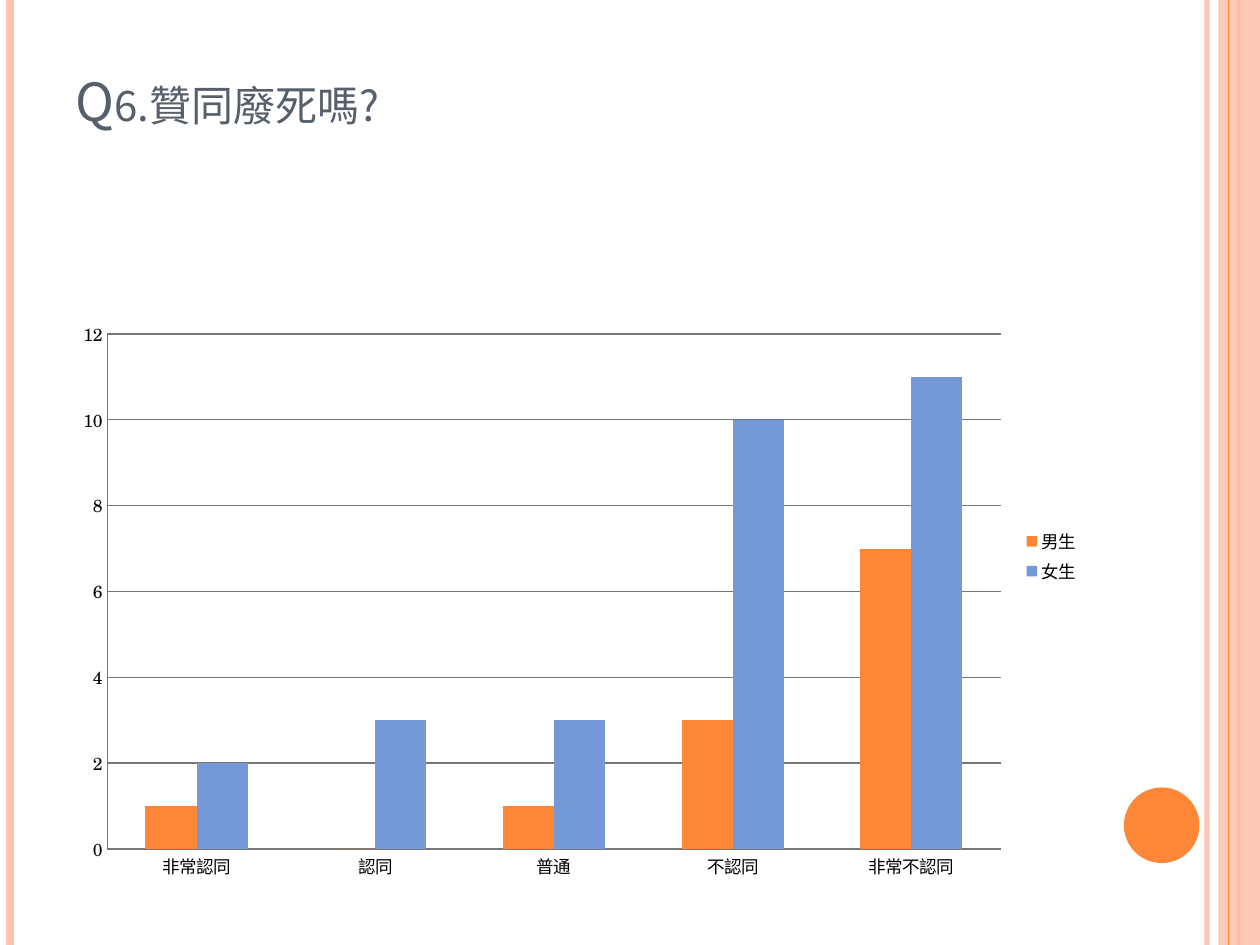
"""Build the survey slide for question 6 with a clustered column chart."""
from lxml import etree
from pptx import Presentation
from pptx.chart.data import CategoryChartData
from pptx.dml.color import RGBColor
from pptx.enum.chart import XL_CHART_TYPE, XL_LEGEND_POSITION, XL_TICK_MARK
from pptx.enum.shapes import MSO_CONNECTOR, MSO_SHAPE
from pptx.enum.text import MSO_ANCHOR
from pptx.oxml import parse_xml
from pptx.oxml.ns import qn
from pptx.util import Inches, Pt

COLUMNS = XL_CHART_TYPE.COLUMN_CLUSTERED
RIGHT = XL_LEGEND_POSITION.RIGHT
NO_TICK = XL_TICK_MARK.NONE
STRAIGHT = MSO_CONNECTOR.STRAIGHT
RECTANGLE, OVAL = MSO_SHAPE.RECTANGLE, MSO_SHAPE.OVAL
BOTTOM = MSO_ANCHOR.BOTTOM

WIDTH, HEIGHT = 10, 7.5
ORANGE, PEACH, GREY = "FE8637", "FEC3AE", "777777"
CJK_FONT, LATIN_FONT = "Noto Sans CJK SC", "TeX Gyre Schola"

QUESTION = "Q6.贊同廢死嗎?"
ANSWERS = ["非常認同", "認同", "普通", "不認同", "非常不認同"]
VOTES = [("男生", [1, 0, 1, 3, 7], ORANGE), ("女生", [2, 3, 3, 10, 11], "7598D9")]
PLOT_AREA = {"x": 0.043, "y": 0.169, "w": 0.868, "h": 0.767}
LEFT_STRIPES = [(9.58, PEACH, 3, 93), (0.08, PEACH, 4.5, 100), (9.83, ORANGE, 1.5, 100)]
EDGE_STRIPE = (9.75, ORANGE, 0.75, 100)


def rgb(color):
    return RGBColor.from_string(color)


def paint(fill, color):
    fill.solid()
    fill.fore_color.rgb = rgb(color)


def set_opacity(shape, percent):
    color = next(shape._element.spPr.iter(qn("a:srgbClr")))
    etree.SubElement(color, qn("a:alpha")).set("val", str(percent * 1000))


def add_stripe(slide, x, color, weight, opacity):
    stripe = slide.shapes.add_connector(
        STRAIGHT, Inches(x), Inches(0), Inches(x), Inches(HEIGHT))
    stripe.line.color.rgb = rgb(color)
    stripe.line.width = Pt(weight)
    if opacity < 100:
        set_opacity(stripe, opacity)
    etree.SubElement(stripe._element.spPr, qn("a:effectLst"))


def add_block(slide, kind, box, color):
    block = slide.shapes.add_shape(kind, *map(Inches, box))
    block.shadow.inherit = False
    paint(block.fill, color)
    block.line.fill.background()
    return block


def add_decoration(slide):
    for stripe in LEFT_STRIPES:
        add_stripe(slide, *stripe)
    band = add_block(slide, RECTANGLE, (9.67, 0, 0.33, HEIGHT), PEACH)
    set_opacity(band, 87)
    add_stripe(slide, *EDGE_STRIPE)
    add_block(slide, OVAL, (8.92, 6.25, 0.6, 0.6), ORANGE)


def add_question(slide):
    box = slide.shapes.add_textbox(*map(Inches, (0.5, 0.3, 8.17, 1.25)))
    frame = box.text_frame
    frame.word_wrap = True
    frame.vertical_anchor = BOTTOM
    frame.margin_bottom = Inches(0.5)
    frame.text = QUESTION
    run = frame.paragraphs[0].runs[0]
    run.font.size = Pt(30)
    run.font.name = CJK_FONT
    run.font.color.rgb = rgb("575F6D")
    properties = run.font._element
    properties.set("cap", "small")
    etree.SubElement(properties, qn("a:ea")).set("typeface", CJK_FONT)


def fix_plot_area(chart):
    sizes = "".join(f'<c:{key}Mode val="edge"/>' for key in "xy")
    sizes += "".join(f'<c:{key} val="{value}"/>' for key, value in PLOT_AREA.items())
    plot_area = chart._chartSpace.chart.plotArea
    for layout in plot_area.findall(qn("c:layout")):
        plot_area.remove(layout)
    plot_area.insert(0, parse_xml(
        '<c:layout xmlns:c="http://schemas.openxmlformats.org/drawingml/2006/chart">'
        f'<c:manualLayout><c:layoutTarget val="inner"/>{sizes}</c:manualLayout></c:layout>'))


def add_votes(slide):
    data = CategoryChartData()
    data.categories = ANSWERS
    for name, counts, _ in VOTES:
        data.add_series(name, counts)
    chart = slide.shapes.add_chart(
        COLUMNS, *map(Inches, (0.5, 1.75, 8.17, 5.33)), data).chart
    chart.has_title = False
    chart.font.size = Pt(10)
    chart.font.name = LATIN_FONT
    chart.font.color.rgb = rgb("000000")
    chart.has_legend = True
    chart.legend.position = RIGHT
    chart.legend.include_in_layout = False
    plot = chart.plots[0]
    plot.gap_width = 150
    plot.overlap = 0
    plot.vary_by_categories = False
    for series, (_, _, color) in zip(plot.series, VOTES):
        paint(series.format.fill, color)
    counts_axis = chart.value_axis
    counts_axis.minimum_scale, counts_axis.maximum_scale = 0, 12
    counts_axis.major_unit = 2
    counts_axis.has_major_gridlines = True
    for axis in (chart.category_axis, counts_axis):
        axis.major_tick_mark = axis.minor_tick_mark = NO_TICK
    for part in (chart.category_axis, counts_axis, counts_axis.major_gridlines):
        part.format.line.color.rgb = rgb(GREY)
        part.format.line.width = Pt(0.75)
    fix_plot_area(chart)


def main():
    deck = Presentation()
    deck.slide_width, deck.slide_height = Inches(WIDTH), Inches(HEIGHT)
    slide = deck.slides.add_slide(deck.slide_layouts[6])
    add_decoration(slide)
    add_question(slide)
    add_votes(slide)
    deck.save("out.pptx")


if __name__ == "__main__":
    main()
